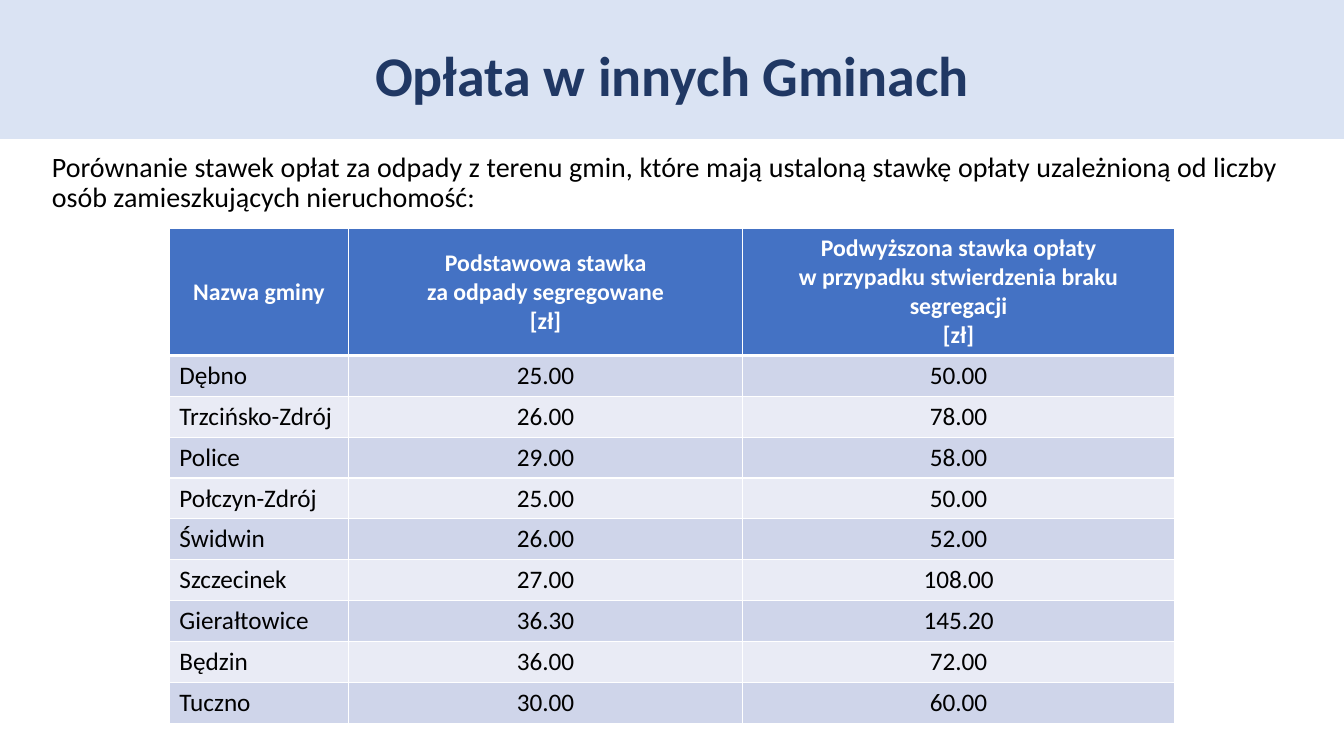
import pptx
import pptx.util
import pptx.dml.color
import pptx.enum.shapes
import pptx.enum.text
import pptx.oxml
import pptx.oxml.ns

Pt = pptx.util.Pt
ALIGN = pptx.enum.text.PP_ALIGN
MIDDLE = pptx.enum.text.MSO_ANCHOR.MIDDLE
FONT = "Calibri"
COLORS = {
    "band": "DAE3F3",
    "title": "203864",
    "text": "000000",
    "header": "4472C4",
    "white": "FFFFFF",
    "odd": "CFD5EA",
    "even": "E9EBF5",
}

HEADERS = [
    ["Nazwa gminy"],
    ["Podstawowa stawka", "za odpady segregowane", "[zł]"],
    ["Podwyższona stawka opłaty",
     "w przypadku stwierdzenia braku segregacji", "[zł]"],
]
RATES = [
    ("Dębno", "25.00", "50.00"),
    ("Trzcińsko-Zdrój", "26.00", "78.00"),
    ("Police", "29.00", "58.00"),
    ("Połczyn-Zdrój", "25.00", "50.00"),
    ("Świdwin", "26.00", "52.00"),
    ("Szczecinek", "27.00", "108.00"),
    ("Gierałtowice", "36.30", "145.20"),
    ("Będzin", "36.00", "72.00"),
    ("Tuczno", "30.00", "60.00"),
]
COL_WIDTHS = [128, 281.5, 308.5]
HEADER_HEIGHT, ROW_HEIGHT = 89, 29.2


def rgb(name):
    return pptx.dml.color.RGBColor.from_string(COLORS[name])


def write(tf, lines, size, color, align, bold=False, spacing=None):
    for i, line in enumerate(lines):
        p = tf.paragraphs[0] if i == 0 else tf.add_paragraph()
        p.alignment = align
        if spacing:
            p.line_spacing = spacing
        r = p.add_run()
        r.text = line
        r.font.name = FONT
        r.font.size = Pt(size)
        r.font.bold = bold
        r.font.color.rgb = rgb(color)


def add_band(s, height):
    sp = s.shapes.add_shape(pptx.enum.shapes.MSO_SHAPE.RECTANGLE,
                            0, 0, Pt(960), Pt(height))
    sp.shadow.inherit = False
    sp.fill.solid()
    sp.fill.fore_color.rgb = rgb("band")
    sp.line.color.rgb = rgb("band")
    sp.line.width = Pt(1)
    # Behind the title placeholder
    s.shapes.title._element.addprevious(sp._element)


def place_text(sp, box, text, size, color, align, bold=False):
    sp.left, sp.top, sp.width, sp.height = [Pt(v) for v in box]
    tf = sp.text_frame
    tf.word_wrap = True
    tf.auto_size = pptx.enum.text.MSO_AUTO_SIZE.NONE
    tf.vertical_anchor = MIDDLE
    write(tf, [text], size, color, align, bold, spacing=0.9)


def set_borders(cell, **widths):
    tcPr = cell._tc.get_or_add_tcPr()
    for side in "LRTB":
        tcPr.append(pptx.oxml.parse_xml(
            f'<a:ln{side} {pptx.oxml.ns.nsdecls("a")} w="{Pt(widths.get(side, 1))}">'
            f'<a:solidFill><a:srgbClr val="{COLORS["white"]}"/></a:solidFill>'
            f'</a:ln{side}>'))


def fill_cell(cell, lines, size, color, align, fill, bold=False, **borders):
    cell.vertical_anchor = MIDDLE
    write(cell.text_frame, lines, size, color, align, bold)
    set_borders(cell, **borders)
    cell.fill.solid()
    cell.fill.fore_color.rgb = rgb(fill)


def add_rate_table(s, left, top):
    height = HEADER_HEIGHT + ROW_HEIGHT * len(RATES)
    table = s.shapes.add_table(len(RATES) + 1, len(HEADERS), Pt(left), Pt(top),
                               Pt(sum(COL_WIDTHS)), Pt(height)).table
    for col, width in zip(table.columns, COL_WIDTHS):
        col.width = Pt(width)
    for i, row in enumerate(table.rows):
        row.height = Pt(ROW_HEIGHT if i else HEADER_HEIGHT)

    # Header row
    for c, lines in enumerate(HEADERS):
        fill_cell(table.cell(0, c), lines, 17, "white", ALIGN.CENTER,
                  "header", bold=True, B=3)

    # One row per commune
    for i, rates in enumerate(RATES, start=1):
        for c, value in enumerate(rates):
            fill_cell(table.cell(i, c), [value], 18, "text",
                      ALIGN.CENTER if c else ALIGN.LEFT,
                      "odd" if i % 2 else "even", T=3 if i == 1 else 1)


def main():
    prs = pptx.Presentation()
    prs.slide_width, prs.slide_height = Pt(960), Pt(540)
    s = prs.slides.add_slide(prs.slide_layouts[5])

    # Heading on its band
    add_band(s, 99)
    place_text(s.shapes.title, (66, 13.5, 828, 85.5), "Opłata w innych Gminach",
               40, "title", ALIGN.CENTER, bold=True)

    # Introduction
    intro = s.shapes.add_textbox(0, 0, 0, 0)
    place_text(intro, (30, 94, 889.5, 74),
               "Porównanie stawek opłat za odpady z terenu gmin, które mają "
               "ustaloną stawkę opłaty uzależnioną od liczby osób "
               "zamieszkujących nieruchomość:", 20, "text", ALIGN.JUSTIFY)

    # Comparison of rates
    add_rate_table(s, 121, 163.5)
    prs.save("out.pptx")


if __name__ == "__main__":
    main()
